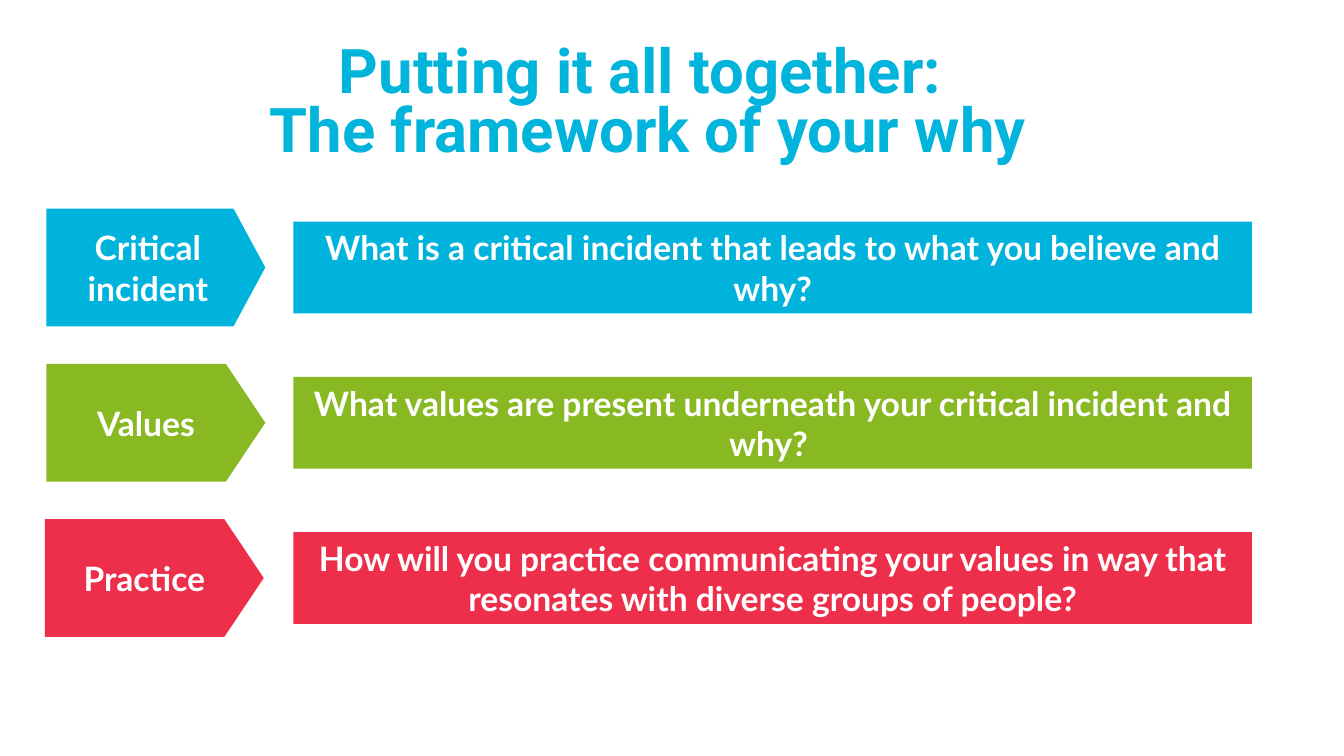
from dataclasses import dataclass

from pptx import Presentation
from pptx.dml.color import RGBColor
from pptx.enum.shapes import MSO_SHAPE
from pptx.enum.text import MSO_ANCHOR, MSO_AUTO_SIZE, PP_ALIGN
from pptx.shapes.autoshape import Shape
from pptx.slide import Slide
from pptx.util import Pt

ARROW, RECT = MSO_SHAPE.PENTAGON, MSO_SHAPE.RECTANGLE
CENTER = PP_ALIGN.CENTER
TOP, MIDDLE = MSO_ANCHOR.TOP, MSO_ANCHOR.MIDDLE
FIXED = MSO_AUTO_SIZE.NONE

WHITE = RGBColor(0xFF, 0xFF, 0xFF)
AQUA = RGBColor(0x00, 0xB4, 0xDC)
BLUE = RGBColor(0x00, 0xB3, 0xDC)
GREEN = RGBColor(0x89, 0xB9, 0x22)
RED = RGBColor(0xEE, 0x2F, 0x4B)

HEAD = {"name": "Roboto", "size": Pt(44), "bold": True}
BODY = {"name": "Lato", "size": Pt(24), "bold": True}

TITLE = "Putting it all together: \nThe framework of your why"
FIRST, PITCH = 149, 110.9
TAG_W, TAG_H = 156.4, 84.2
BAR_X, BAR_W, BAR_H = 209.5, 684.7, 65.5


@dataclass(frozen=True)
class Step:
    label: str
    prompt: str
    color: RGBColor
    left: float
    point: float


STEPS = (
    Step("Critical incident",
         "What is a critical incident that leads to what you believe and why?",
         BLUE, 33.1, 0.27),
    Step("Values",
         "What values are present underneath your critical incident and why? ",
         GREEN, 33.1, 0.335),
    Step("Practice",
         "How will you practice communicating your values in way that "
         "resonates with diverse groups of people?",
         RED, 32, 0.335),
)


def write(shape: Shape, text: str, style: dict, color: RGBColor,
          anchor: MSO_ANCHOR, spacing: float = 1.0) -> None:
    frame = shape.text_frame
    frame.text = text
    frame.word_wrap = True
    frame.auto_size = FIXED
    frame.vertical_anchor = anchor
    for para in frame.paragraphs:
        para.alignment = CENTER
        para.line_spacing = spacing
        para.space_before = Pt(0)
        for run in para.runs:
            for key, value in style.items():
                setattr(run.font, key, value)
            run.font.color.rgb = color


def add_block(slide: Slide, kind: MSO_SHAPE, left: float, top: float,
              width: float, height: float, text: str,
              color: RGBColor) -> Shape:
    block = slide.shapes.add_shape(
        kind, Pt(left), Pt(top), Pt(width), Pt(height))
    block.shadow.inherit = False
    block.fill.solid()
    block.fill.fore_color.rgb = color
    block.line.fill.background()
    write(block, text, BODY, WHITE, MIDDLE)
    return block


def add_step(slide: Slide, step: Step, top: float) -> None:
    tag = add_block(slide, ARROW, step.left, top, TAG_W, TAG_H,
                    step.label, step.color)
    tag.adjustments[0] = step.point
    add_block(slide, RECT, BAR_X, top + (TAG_H - BAR_H) / 2, BAR_W, BAR_H,
              step.prompt, step.color)


def main() -> None:
    deck = Presentation()
    deck.slide_width, deck.slide_height = Pt(960), Pt(540)
    slide = deck.slides.add_slide(deck.slide_layouts[5])
    title = slide.shapes.title
    title.left, title.top = Pt(31.7), Pt(29.5)
    title.width, title.height = Pt(862.6), Pt(93.6)
    write(title, TITLE, HEAD, AQUA, TOP, 0.8)
    for row, step in enumerate(STEPS):
        add_step(slide, step, FIRST + row * PITCH)
    deck.save("out.pptx")


if __name__ == "__main__":
    main()
